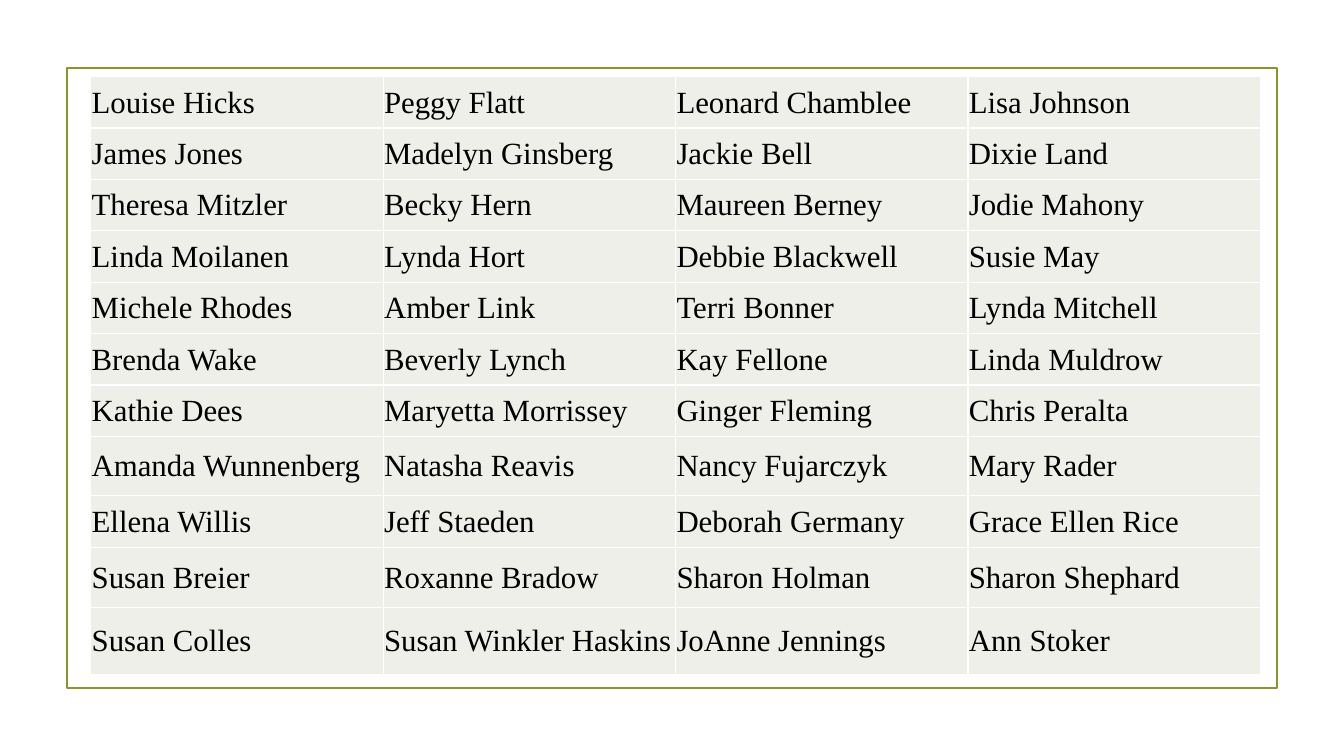
from lxml import etree
from pptx import Presentation, util as u
from pptx.dml.color import RGBColor
from pptx.enum import shapes, text
from pptx.oxml.ns import qn

WIDTH, HEIGHT = u.Inches(13.33), u.Inches(7.5)
FONT, TEXT_SIZE = "Times New Roman", 22
GREEN, PALE, WHITE, BLACK = "83992A", "EDEFE8", "FFFFFF", "000000"

NAMES = [
    ["Louise Hicks", "Peggy Flatt", "Leonard Chamblee", "Lisa Johnson"],
    ["James Jones", "Madelyn Ginsberg", "Jackie Bell", "Dixie Land"],
    ["Theresa Mitzler", "Becky Hern", "Maureen Berney", "Jodie Mahony"],
    ["Linda Moilanen", "Lynda Hort", "Debbie Blackwell", "Susie May"],
    ["Michele Rhodes", "Amber Link", "Terri Bonner", "Lynda Mitchell"],
    ["Brenda Wake", "Beverly Lynch", "Kay Fellone", "Linda Muldrow"],
    ["Kathie Dees", "Maryetta Morrissey", "Ginger Fleming", "Chris Peralta"],
    ["Amanda Wunnenberg", "Natasha Reavis", "Nancy Fujarczyk", "Mary Rader"],
    ["Ellena Willis", "Jeff Staeden", "Deborah Germany", "Grace Ellen Rice"],
    ["Susan Breier", "Roxanne Bradow", "Sharon Holman", "Sharon Shephard"],
    ["Susan Colles", "Susan Winkler Haskins", "JoAnne Jennings", "Ann Stoker"],
]
ROW_HEIGHT = 0.51
TALL_ROWS = {7: 0.59, 9: 0.6, 10: 0.66}
COLUMN_WIDTH = 2.9


def color(hex_string):
    return RGBColor.from_string(hex_string)


def add_frame(slide, left, top, width, height):
    """Outlined rectangle, placed by shares of the slide's size."""
    frame = slide.shapes.add_shape(
        shapes.MSO_SHAPE.RECTANGLE, int(WIDTH * left), int(HEIGHT * top),
        int(WIDTH * width), int(HEIGHT * height))
    frame.shadow.inherit = False
    frame.fill.background()
    frame.line.color.rgb = color(GREEN)
    frame.line.width = u.Pt(1.25)


def add_borders(cell, hex_string, points):
    properties = cell._tc.get_or_add_tcPr()
    for side in ("a:lnL", "a:lnR", "a:lnT", "a:lnB"):
        line = etree.SubElement(properties, qn(side), w=str(u.Pt(points)))
        fill = etree.SubElement(line, qn("a:solidFill"))
        etree.SubElement(fill, qn("a:srgbClr"), val=hex_string)


def format_cell(cell, name):
    cell.text_frame.text = name
    cell.vertical_anchor = text.MSO_ANCHOR.MIDDLE
    cell.margin_left = cell.margin_right = cell.margin_top = u.Inches(0.01)
    cell.margin_bottom = 0
    add_borders(cell, WHITE, 1)
    cell.fill.solid()
    cell.fill.fore_color.rgb = color(PALE)
    font = cell.text_frame.paragraphs[0].runs[0].font
    font.name, font.size = FONT, u.Pt(TEXT_SIZE)
    font.color.rgb = color(BLACK)


def add_name_table(slide, left, top):
    heights = [TALL_ROWS.get(row, ROW_HEIGHT) for row in range(len(NAMES))]
    columns = len(NAMES[0])
    table = slide.shapes.add_table(
        len(NAMES), columns, u.Inches(left), u.Inches(top),
        u.Inches(columns * COLUMN_WIDTH), u.Inches(sum(heights))).table
    table.first_row = table.horz_banding = False
    for column in table.columns:
        column.width = u.Inches(COLUMN_WIDTH)
    for row, height, names in zip(table.rows, heights, NAMES):
        row.height = u.Inches(height)
        for cell, name in zip(row.cells, names):
            format_cell(cell, name)


def main():
    presentation = Presentation()
    presentation.slide_width, presentation.slide_height = WIDTH, HEIGHT
    slide = presentation.slides.add_slide(presentation.slide_layouts[6])
    # Green frame around the list
    add_frame(slide, 0.05, 0.09, 0.9, 0.82)
    # Names in four columns
    add_name_table(slide, 0.9, 0.76)
    presentation.save("out.pptx")


if __name__ == "__main__":
    main()
